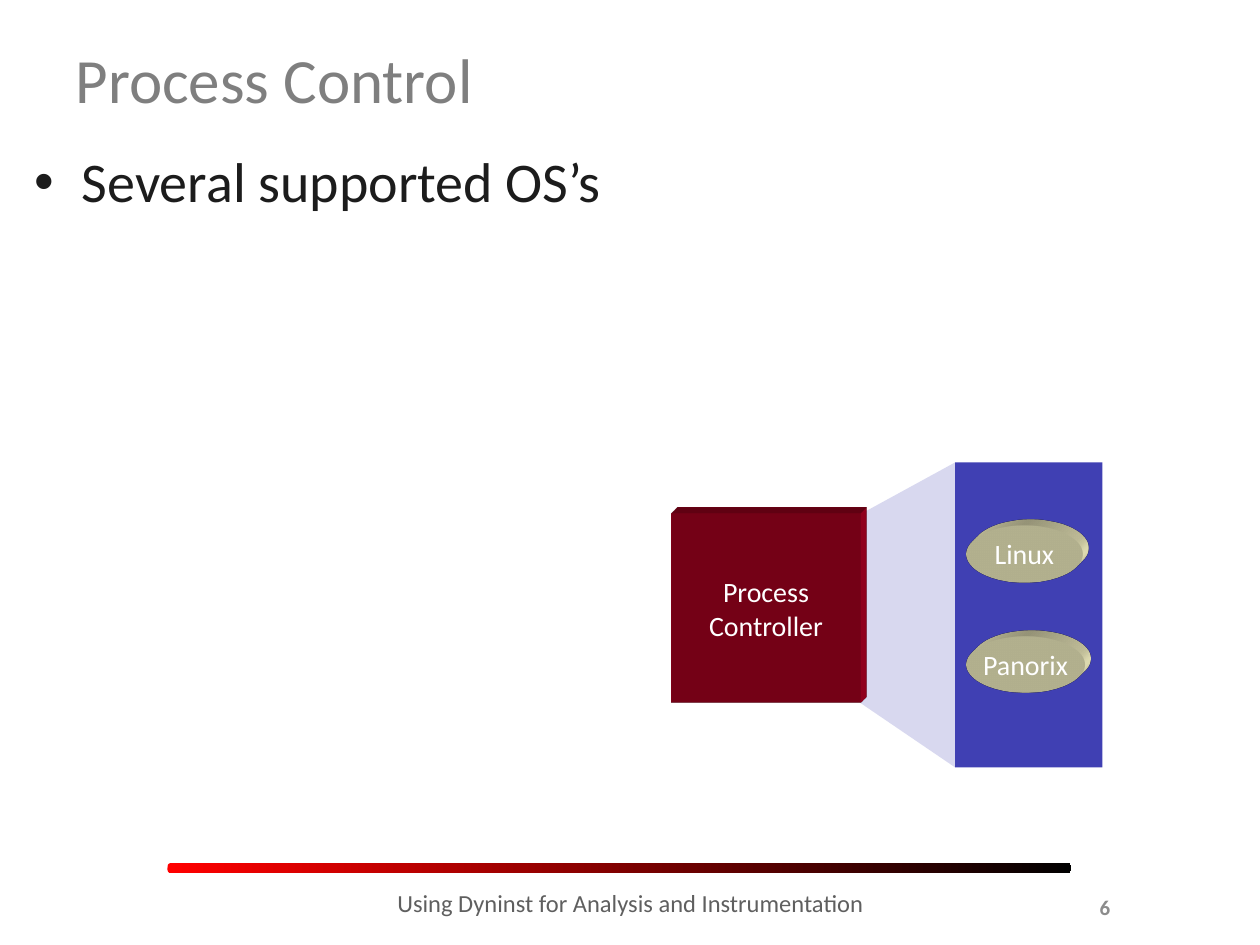
from dataclasses import dataclass

from lxml import etree
from pptx import Presentation
from pptx.dml.color import RGBColor as Rgb
from pptx.enum.shapes import MSO_SHAPE as Kind
from pptx.enum.text import MSO_ANCHOR as Anchor, MSO_AUTO_SIZE as Fit, PP_ALIGN as Align
from pptx.oxml import parse_xml
from pptx.oxml.ns import nsdecls, qn
from pptx.shapes.autoshape import Shape
from pptx.slide import Slide
from pptx.util import Inches, Pt

FONT = "Calibri"
GREY = Rgb(0x7F, 0x7F, 0x7F)
INK = Rgb(0x1C, 0x1C, 0x1C)
SLATE = Rgb(0x5F, 0x5F, 0x5F)
PALE = Rgb(0x8C, 0x8C, 0x8C)
WHITE = Rgb(0xFF, 0xFF, 0xFF)
BLUE = Rgb(0x40, 0x40, 0xB3)
CREAM = Rgb(0xFE, 0xFA, 0xC9)
WINE = Rgb(0xA5, 0x00, 0x21)
RED = Rgb(0xFF, 0x00, 0x00)
BLACK = Rgb(0x00, 0x00, 0x00)


@dataclass
class Box:
    left: float
    top: float
    width: float
    height: float

    def place(self) -> tuple:
        return tuple(map(Inches, (self.left, self.top, self.width, self.height)))


@dataclass
class Block:
    text: str
    kind: Kind
    box: Box
    fill: Rgb
    wrap: bool


PANEL = Box(7.58, 3.67, 1.17, 2.42)
CORE = Box(5.33, 4.08, 1.5, 1.5)
BLOCKS = [
    Block("Linux", Kind.OVAL, Box(7.67, 4.17, 0.92, 0.45), CREAM, False),
    Block("Panorix", Kind.OVAL, Box(7.67, 5.05, 0.94, 0.45), CREAM, False),
    Block("Process Controller", Kind.RECTANGLE, CORE, WINE, True),
]


def write(shape: Shape, text: str, size: int, color: Rgb, align: Align,
          anchor: Anchor, wrap: bool = True, bold: bool = False) -> None:
    frame = shape.text_frame
    frame.word_wrap = wrap
    frame.auto_size = Fit.NONE
    frame.vertical_anchor = anchor
    para = frame.paragraphs[0]
    para.alignment = align
    para.space_before = Pt(0)
    run = para.add_run()
    run.text = text
    font = run.font
    font.name, font.size, font.bold = FONT, Pt(size), bold
    font.color.rgb = color


def paint(shape: Shape, fill: Rgb) -> None:
    shape.shadow.inherit = False
    shape.fill.solid()
    shape.fill.fore_color.rgb = fill
    shape.line.fill.background()


def add(slide: Slide, kind: Kind, box: Box, fill: Rgb) -> Shape:
    shape = slide.shapes.add_shape(kind, *box.place())
    paint(shape, fill)
    return shape


def raise_up(shape: Shape, color: Rgb) -> None:
    props = shape._element.spPr
    props.append(parse_xml(
        f'<a:scene3d {nsdecls("a")}><a:camera prst="legacyObliqueTopRight"/>'
        '<a:lightRig rig="legacyFlat3" dir="b"/></a:scene3d>'))
    props.append(parse_xml(
        f'<a:sp3d {nsdecls("a")} extrusionH="125000" prstMaterial="legacyMatte">'
        f'<a:extrusionClr><a:srgbClr val="{color}"/></a:extrusionClr></a:sp3d>'))


def draw_block(slide: Slide, block: Block) -> None:
    shape = add(slide, block.kind, block.box, block.fill)
    raise_up(shape, block.fill)
    write(shape, block.text, 16, WHITE, Align.CENTER, Anchor.MIDDLE, block.wrap)


def draw_beam(slide: Slide) -> None:
    edge = CORE.left + CORE.width
    points = [(edge, CORE.top), (PANEL.left, PANEL.top),
              (PANEL.left, PANEL.top + PANEL.height), (edge, CORE.top + CORE.height)]
    spots = [(Inches(x), Inches(y)) for x, y in points]
    pen = slide.shapes.build_freeform(*spots[0])
    pen.add_line_segments(spots[1:], close=True)
    beam = pen.convert_to_shape()
    paint(beam, BLUE)
    tint = beam._element.spPr.find(qn("a:solidFill"))[0]
    etree.SubElement(tint, qn("a:alpha")).set("val", "20000")


def draw_bar(slide: Slide) -> None:
    bar = add(slide, Kind.ROUNDED_RECTANGLE, Box(1.33, 6.85, 7.17, 0.08), RED)
    bar.adjustments[0] = 0.33
    bar.fill.gradient()
    bar.fill.gradient_angle = 0
    for stop, color, spot in zip(bar.fill.gradient_stops, (RED, BLACK), (0, 1)):
        stop.color.rgb = color
        stop.position = spot


def put(shape: Shape, box: Box) -> None:
    shape.left, shape.top, shape.width, shape.height = box.place()


def draw_list(slide: Slide) -> None:
    body = slide.placeholders[1]
    put(body, Box(0.17, 1.17, 5.33, 0.58))
    para = body.text_frame.paragraphs[0]
    props = para._p.get_or_add_pPr()
    props.set("marL", str(Inches(0.38)))
    props.set("indent", str(-Inches(0.38)))
    etree.SubElement(props, qn("a:buFont")).set("typeface", "Arial")
    etree.SubElement(props, qn("a:buChar")).set("char", "•")
    para.line_spacing = 0.9
    write(body, "Several supported OS’s", 32, INK, Align.LEFT, Anchor.TOP)


def main() -> None:
    deck = Presentation()
    deck.slide_width, deck.slide_height = Inches(10), Inches(7.5)
    slide = deck.slides.add_slide(deck.slide_layouts[1])
    draw_bar(slide)
    title = slide.shapes.title
    put(title, Box(0.5, 0, 9, 1.25))
    write(title, "Process Control", 36, GREY, Align.LEFT, Anchor.MIDDLE)
    draw_list(slide)
    foot = slide.shapes.add_textbox(*Box(2.42, 7, 5.17, 0.4).place())
    write(foot, "Using Dyninst for Analysis and Instrumentation", 14, SLATE,
          Align.CENTER, Anchor.TOP)
    add(slide, Kind.RECTANGLE, PANEL, BLUE)
    draw_beam(slide)
    for block in BLOCKS:
        draw_block(slide, block)
    page = slide.shapes.add_textbox(*Box(7.58, 7, 1.33, 0.4).place())
    write(page, "6", 12, PALE, Align.RIGHT, Anchor.MIDDLE, bold=True)
    deck.save("out.pptx")


if __name__ == "__main__":
    main()
